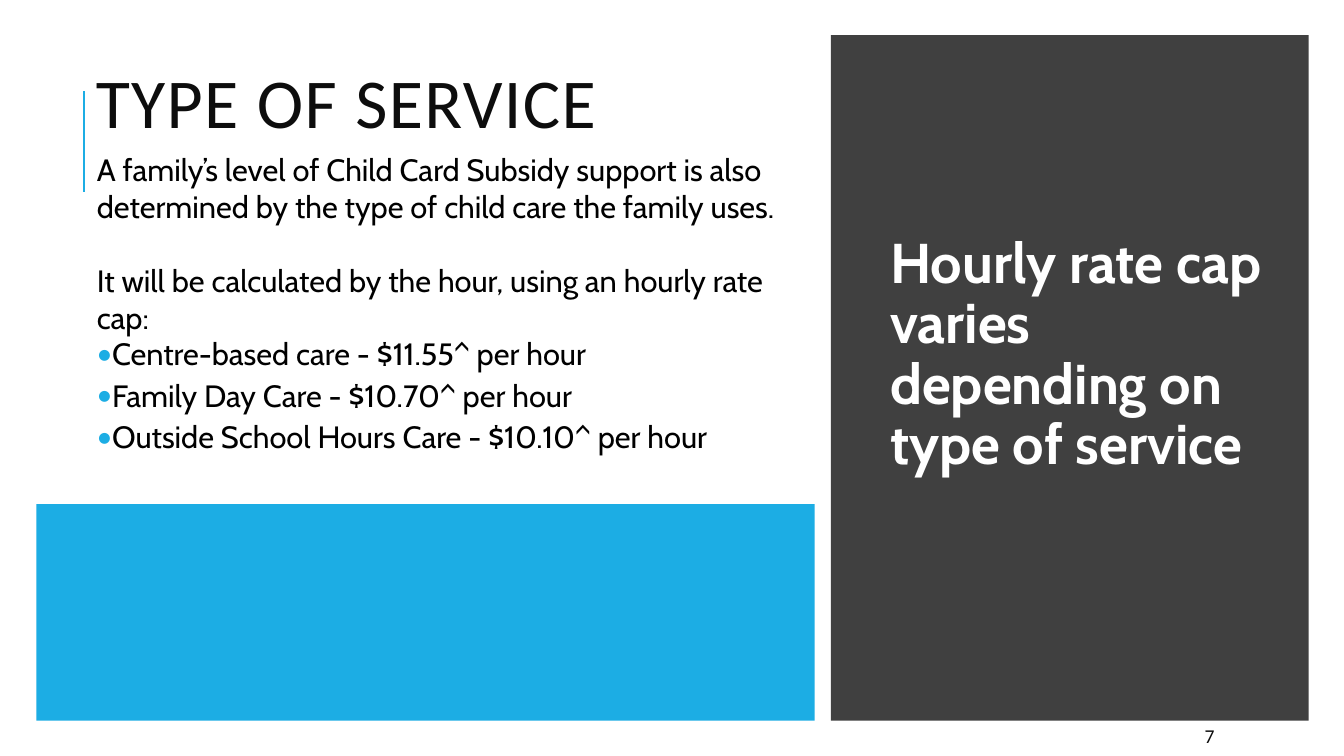
"""Build the slide on hourly rate caps by type of child care service."""
from lxml.etree import SubElement
from pptx import Presentation
from pptx.dml.color import RGBColor
from pptx.enum.shapes import MSO_CONNECTOR, MSO_SHAPE
from pptx.enum.text import MSO_ANCHOR, MSO_AUTO_SIZE, PP_ALIGN
from pptx.oxml.ns import qn
from pptx.util import Inches, Pt

BLUE = RGBColor(0x1C, 0xAD, 0xE4)
CHARCOAL = RGBColor(0x40, 0x40, 0x40)
INK = RGBColor(0x0D, 0x0D, 0x0D)
BLACK = RGBColor(0, 0, 0)
WHITE = RGBColor(0xFF, 0xFF, 0xFF)


def place(box, left, top, width, height, anchor):
    box.left, box.top = Inches(left), Inches(top)
    box.width, box.height = Inches(width), Inches(height)
    frame = box.text_frame
    frame.word_wrap = True
    frame.auto_size = MSO_AUTO_SIZE.NONE
    frame.vertical_anchor = anchor
    page.shapes._spTree.append(box._element)
    return frame


def style(para, font, size, color, spacing=1.0, before=0, after=0, indent=0, hanging=0):
    props = para._p.get_or_add_pPr()
    props.set("marL", str(Inches(indent)))
    props.set("indent", str(Inches(-hanging)))
    if hanging:
        SubElement(SubElement(props, qn("a:buClr")), qn("a:srgbClr"), val=str(BLUE))
        SubElement(props, qn("a:buFont"), typeface="Calibri")
        SubElement(props, qn("a:buChar"), char="•")
    else:
        SubElement(props, qn("a:buNone"))
    para.alignment = PP_ALIGN.LEFT
    para.line_spacing = spacing
    para.space_before, para.space_after = Pt(before), Pt(after)
    para.font.name, para.font.size = font, Pt(size)
    para.font.color.rgb = color


deck = Presentation()
deck.slide_width, deck.slide_height = Inches(13.33), Inches(7.5)
page = deck.slides.add_slide(deck.slide_layouts[3])
title, details, callout = page.placeholders

accent = page.shapes.add_connector(
    MSO_CONNECTOR.STRAIGHT, Inches(0.83), Inches(1.9), Inches(0.83), Inches(0.9))
accent.line.color.rgb = BLUE
accent.line.width = Pt(1.5)
SubElement(accent._element.spPr, qn("a:effectLst"))

for left, top, width, height, color in [
    (0.36, 5, 7.72, 2.15, BLUE),
    (8.24, 0.35, 4.74, 6.8, CHARCOAL),
]:
    panel = page.shapes.add_shape(
        MSO_SHAPE.RECTANGLE, Inches(left), Inches(top), Inches(width), Inches(height))
    panel.shadow.inherit = False
    panel.fill.solid()
    panel.fill.fore_color.rgb = color
    panel.line.fill.background()

frame = place(callout, 8.78, 1.55, 3.98, 5.31, MSO_ANCHOR.MIDDLE)
frame.margin_left = frame.margin_right = frame.margin_top = Inches(0.05)
frame.margin_bottom = Inches(1.4)
frame.text = "Hourly rate cap varies depending on type of service"
style(frame.paragraphs[0], "Cabin", 40, WHITE, spacing=0.9)
frame.paragraphs[0].font.bold = True

number = page.shapes.add_textbox(0, 0, 0, 0)
frame = place(number, 11.85, 7.15, 1.06, 0.3, MSO_ANCHOR.MIDDLE)
frame.text = "7"
style(frame.paragraphs[0], "Calibri", 14, INK, after=6)

frame = place(details, 0.72, 1.45, 7.08, 3.41, MSO_ANCHOR.TOP)
intro = [
    "A family’s level of Child Card Subsidy support is also determined "
    "by the type of child care the family uses.",
    "It will be calculated by the hour, using an hourly rate cap:",
]
rates = [("Centre-based care", "11.55"), ("Family Day Care", "10.70"),
         ("Outside School Hours Care", "10.10")]
frame.text = "\n".join(intro + [f"{service} - ${cap}^ per hour" for service, cap in rates])
for index, para in enumerate(frame.paragraphs):
    if index < len(intro):
        style(para, "Cabin", 22, BLACK, before=26.5 * index, indent=0.14)
    else:
        style(para, "Cabin", 22, BLACK, 0.9, 2, 4, indent=0.29, hanging=0.15)

frame = place(title, 0.85, 0.52, 11.62, 1.11, MSO_ANCHOR.MIDDLE)
frame.text = "TYPE OF SERVICE"
heading = frame.paragraphs[0]
style(heading, "Calibri", 50, INK, spacing=0.8)
heading._p.get_or_add_pPr().get_or_add_defRPr().set("spc", "100")

deck.save("out.pptx")
